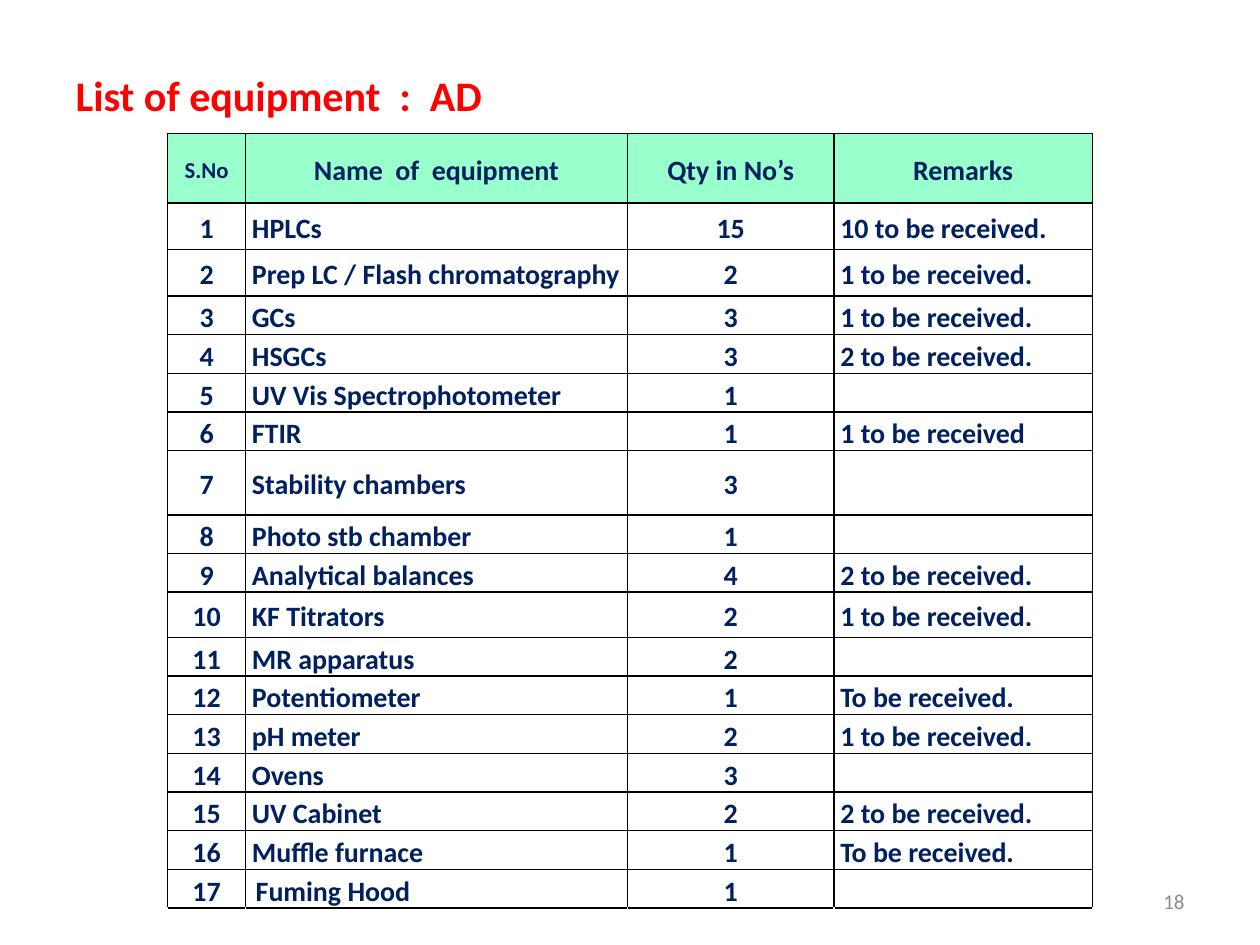
"""Build the slide that lists the analytical equipment with quantities and remarks."""
from lxml.etree import SubElement
from pptx import Presentation
from pptx.dml.color import RGBColor
from pptx.enum.text import MSO_ANCHOR, PP_ALIGN
from pptx.oxml.ns import qn
from pptx.util import Inches, Pt

NAVY = RGBColor(0x00, 0x20, 0x60)
RED = RGBColor(0xFF, 0x00, 0x00)
GRAY = RGBColor(0x8C, 0x8C, 0x8C)
MINT = RGBColor(0x99, 0xFF, 0xCC)
BLACK = RGBColor(0x00, 0x00, 0x00)

TITLE = "List of equipment  :  AD"
PAGE_NUMBER = "18"
HEADINGS = ("S.No", "Name  of  equipment", "Qty in No’s", "Remarks")
EQUIPMENT = [
    ("HPLCs", 15, "10 to be received."),
    ("Prep LC / Flash chromatography", 2, "1 to be received."),
    ("GCs", 3, "1 to be received."),
    ("HSGCs", 3, "2 to be received."),
    ("UV Vis Spectrophotometer", 1, ""),
    ("FTIR", 1, "1 to be received"),
    ("Stability chambers", 3, ""),
    ("Photo stb chamber", 1, ""),
    ("Analytical balances", 4, "2 to be received."),
    ("KF Titrators", 2, "1 to be received."),
    ("MR apparatus", 2, ""),
    ("Potentiometer", 1, "To be received."),
    ("pH meter", 2, "1 to be received."),
    ("Ovens", 3, ""),
    ("UV Cabinet", 2, "2 to be received."),
    ("Muffle furnace", 1, "To be received."),
    ("Fuming Hood", 1, ""),
]
COLUMN_WIDTHS = (0.62, 3.03, 1.64, 2.05)
COLUMN_ALIGNMENTS = (PP_ALIGN.CENTER, PP_ALIGN.LEFT, PP_ALIGN.CENTER, PP_ALIGN.LEFT)
ROW_HEIGHT = 0.3
TALL_ROWS = {0: 0.55, 1: 0.37, 2: 0.37, 7: 0.51, 10: 0.36}
ALL_EDGES = ("lnL", "lnR", "lnT", "lnB")


def write(frame, text, size, color, alignment, bold=True):
    """Put one formatted line of text into a text frame."""
    para = frame.paragraphs[0]
    para.alignment = alignment
    span = para.add_run()
    span.text = text
    span.font.color.rgb = color
    for name, value in {"name": "Calibri", "size": Pt(size), "bold": bold}.items():
        setattr(span.font, name, value)
    return para


def draw_borders(cell, edges):
    """Draw thin black lines on the named edges of a cell."""
    properties = cell._tc.get_or_add_tcPr()
    for edge in edges:
        line = SubElement(properties, qn(f"a:{edge}"), w=str(Pt(1)))
        fill = SubElement(line, qn("a:solidFill"))
        SubElement(fill, qn("a:srgbClr"), val=str(BLACK))


def format_cell(cell, inset, anchor):
    """Set the margins and the vertical anchor of a cell."""
    layout = {"margin_left": Inches(inset), "margin_right": Inches(inset),
              "margin_top": 0, "margin_bottom": 0, "vertical_anchor": anchor}
    for name, value in layout.items():
        setattr(cell, name, value)


def add_title(page):
    """Fill the title placeholder."""
    title = page.shapes.title
    place = {"left": 0.5, "top": 0.5, "width": 5, "height": 0.5}
    for name, value in place.items():
        setattr(title, name, Inches(value))
    title.text_frame.vertical_anchor = MSO_ANCHOR.TOP
    write(title.text_frame, TITLE, 24, RED, PP_ALIGN.LEFT)


def add_page_number(page):
    """Write the page number in the lower right corner."""
    box = page.shapes.add_textbox(Inches(7.17), Inches(6.95), Inches(2.33), Inches(0.4))
    box.text_frame.word_wrap = True
    box.text_frame.vertical_anchor = MSO_ANCHOR.MIDDLE
    write(box.text_frame, PAGE_NUMBER, 12, GRAY, PP_ALIGN.RIGHT, bold=False)


def add_equipment_table(page):
    """Add the numbered equipment table, closed by an open blank row."""
    items = [(str(number), name, str(quantity), remark)
             for number, (name, quantity, remark) in enumerate(EQUIPMENT, 1)]
    rows = [HEADINGS, *items, ("",) * len(HEADINGS)]
    heights = [TALL_ROWS.get(index, ROW_HEIGHT) for index in range(len(rows))]
    table = page.shapes.add_table(
        len(rows), len(HEADINGS), Inches(1.33), Inches(1.06),
        Inches(sum(COLUMN_WIDTHS)), Inches(sum(heights))).table
    table.first_row = table.horz_banding = False
    for column, width in zip(table.columns, COLUMN_WIDTHS):
        column.width = Inches(width)
    for index, (values, height) in enumerate(zip(rows, heights)):
        table.rows[index].height = Inches(height)
        is_heading = index == 0
        is_blank = index == len(rows) - 1
        for position, text in enumerate(values):
            cell = table.cell(index, position)
            is_low = index == len(items) and position in (1, 2)
            format_cell(cell, 0.08 if is_heading or is_low else 0.05,
                        MSO_ANCHOR.BOTTOM if is_low else MSO_ANCHOR.MIDDLE)
            draw_borders(cell, ("lnT",) if is_blank else ALL_EDGES)
            if is_heading:
                cell.fill.solid()
                cell.fill.fore_color.rgb = MINT
            else:
                cell.fill.background()
            if text:
                alignment = PP_ALIGN.CENTER if is_heading else COLUMN_ALIGNMENTS[position]
                size = 13 if is_heading and position == 0 else 16
                para = write(cell.text_frame, text, size, NAVY, alignment)
                para.line_spacing = 1.15


def main():
    """Build and save the deck."""
    deck = Presentation()
    deck.slide_width, deck.slide_height = Inches(10), Inches(7.5)
    page = deck.slides.add_slide(deck.slide_layouts[5])
    add_title(page)
    add_page_number(page)
    add_equipment_table(page)
    deck.save("out.pptx")


if __name__ == "__main__":
    main()
